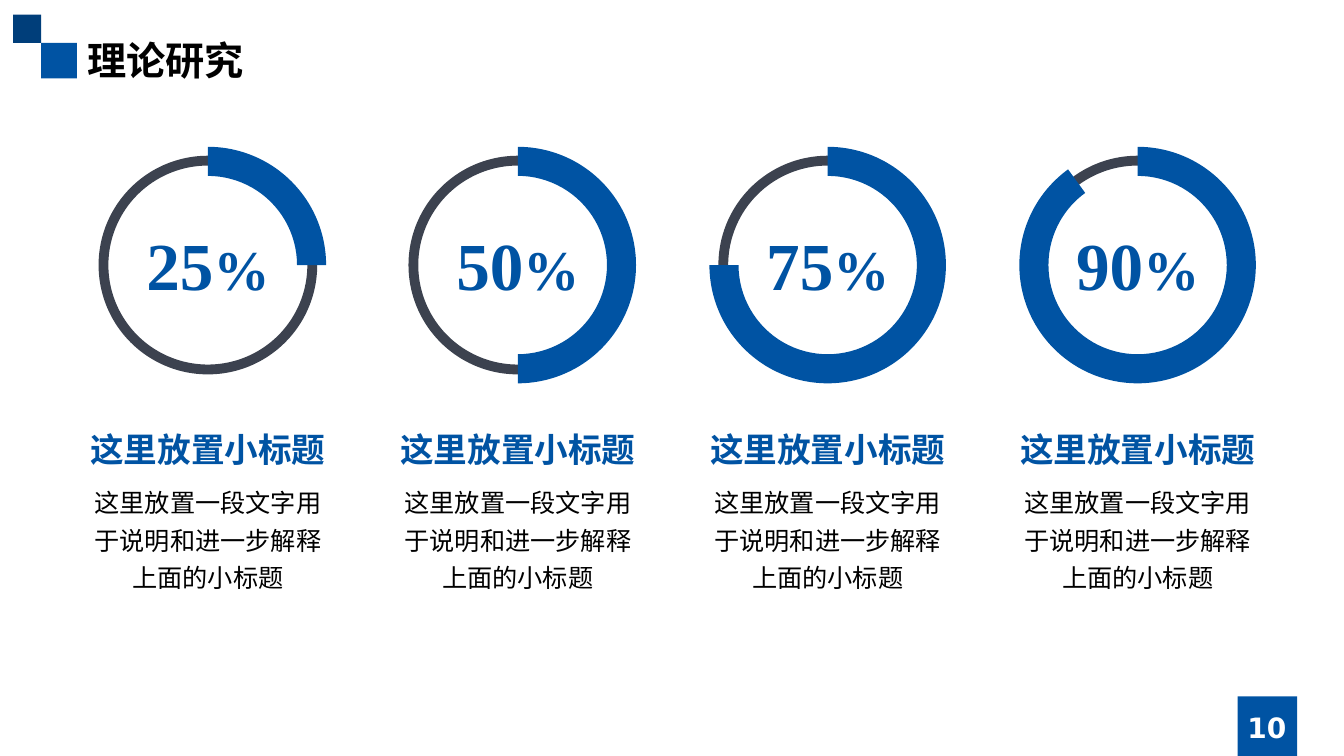
from lxml.etree import SubElement
from pptx import Presentation
from pptx.dml.color import RGBColor
from pptx.enum.shapes import MSO_SHAPE
from pptx.enum.text import MSO_ANCHOR, MSO_AUTO_SIZE, PP_ALIGN
from pptx.oxml.ns import qn
from pptx.util import Cm, Pt

COLORS = {"blue": "0053A3", "navy": "003E7A", "slate": "3C424F",
          "black": "000000", "white": "FFFFFF"}
SERIF = "Times New Roman"
HEADING = "Noto Sans CJK SC"
NUMBER = "DejaVu Sans"


class Page:
    """Holds the style and the current slide."""

    def __init__(self, deck):
        self.slide = deck.slides.add_slide(deck.slide_layouts[5])

    def color(self, name):
        return RGBColor.from_string(COLORS[name])

    def shape(self, kind, left, top, size, fill, adjustments=()):
        item = self.slide.shapes.add_shape(kind, Cm(left), Cm(top), Cm(size), Cm(size))
        item.shadow.inherit = False
        item.fill.solid()
        item.fill.fore_color.rgb = self.color(fill)
        item.line.fill.background()
        for index, value in enumerate(adjustments):
            item.adjustments[index] = value

    def fill_text(self, box, spans, face, color, bold=True, align=PP_ALIGN.CENTER,
                  anchor=MSO_ANCHOR.TOP, spacing=1.0):
        """Fill a box with one paragraph of (text, size) spans."""
        frame = box.text_frame
        frame.word_wrap = True
        frame.auto_size = MSO_AUTO_SIZE.SHAPE_TO_FIT_TEXT
        frame.vertical_anchor = anchor
        para = frame.paragraphs[0]
        para.alignment = align
        para.line_spacing = spacing
        para.font.size = Pt(spans[0][1])
        para.font.bold = bold
        para.font.name = face
        para.font.color.rgb = self.color(color)
        for text, size in spans:
            span = para.add_run()
            span.text = text
            if size != spans[0][1]:
                span.font.size = Pt(size)
            # East Asian typeface
            if face == HEADING:
                SubElement(span.font._element, qn("a:ea"), typeface=face)

    def text(self, left, top, width, height, spans, face, color, **style):
        box = self.slide.shapes.add_textbox(Cm(left), Cm(top), Cm(width), Cm(height))
        self.fill_text(box, spans, face, color, **style)

    def title(self, left, top, width, height, text):
        box = self.slide.shapes.title
        box.left, box.top, box.width, box.height = Cm(left), Cm(top), Cm(width), Cm(height)
        self.fill_text(box, [(text, 28)], HEADING, "black", align=PP_ALIGN.LEFT)

    def gauge(self, center, middle, percent):
        """Thin ring with a thick arc running clockwise from the top."""
        ring, arc = 5.51, 5.96
        self.shape(MSO_SHAPE.DONUT, center - ring / 2, middle - ring / 2, ring,
                   "slate", [0.045])
        # Angles count 0.6 per degree, clockwise from the right
        end = (percent * 3.6 - 90) % 360 * 0.6
        self.shape(MSO_SHAPE.BLOCK_ARC, center - arc / 2, middle - arc / 2, arc,
                   "blue", [162, end, 0.123])
        self.text(center - 2.87, 5.51, 5.74, 2.31, [(str(percent), 48), ("%", 40)],
                  SERIF, "blue")


def main():
    deck = Presentation()
    deck.slide_width, deck.slide_height = Cm(33.87), Cm(19.05)
    page = Page(deck)

    # Header and page number
    page.shape(MSO_SHAPE.RECTANGLE, 1.04, 1.08, 0.9, "blue")
    page.shape(MSO_SHAPE.RECTANGLE, 0.33, 0.37, 0.71, "navy")
    page.shape(MSO_SHAPE.RECTANGLE, 31.19, 17.55, 1.5, "blue")
    page.title(1.94, 0.79, 15, 1.45, "理论研究")
    page.text(30, 17.81, 3.86, 1.02, [("10", 20)], NUMBER, "white",
              anchor=MSO_ANCHOR.MIDDLE)

    # Four gauge columns
    for column, percent in enumerate([25, 50, 75, 90]):
        center = 5.24 + column * 7.81
        page.gauge(center, 6.68, percent)
        page.text(center - 3.57, 10.69, 7.14, 1.27, [("这里放置小标题", 24)],
                  SERIF, "blue")
        page.text(center - 3.27, 11.96, 6.54, 3.05,
                  [("这里放置一段文字用于说明和进一步解释上面的小标题", 18)],
                  SERIF, "black", bold=False, spacing=1.25)

    deck.save("out.pptx")


if __name__ == "__main__":
    main()
